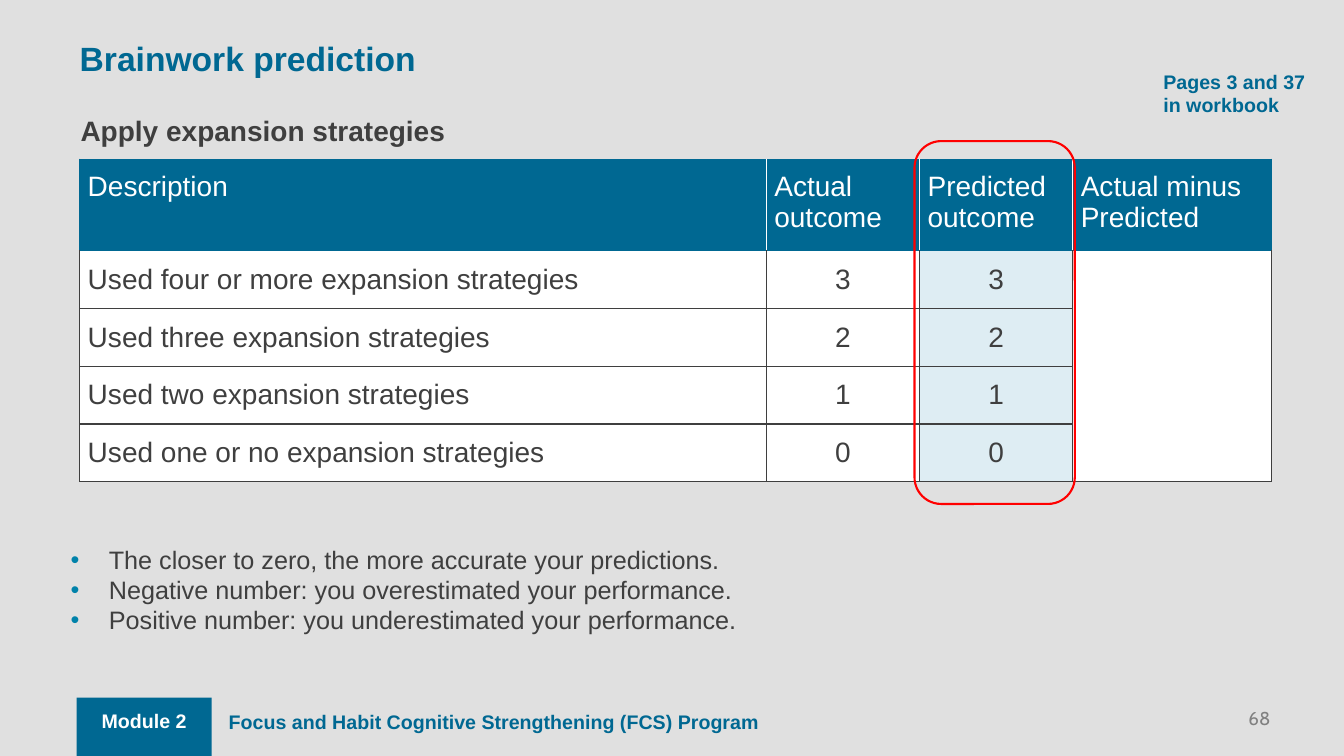
from lxml import etree
from pptx import Presentation
from pptx import util as u
from pptx.dml.color import RGBColor
from pptx.enum import shapes, text
from pptx.oxml import ns

COLORS = {
    "backdrop": "E0E0E0", "brand": "006892", "ink": "3F3F3F", "white": "FFFFFF",
    "highlight": "DEEDF3", "ring": "FF0000", "bullet": "0082AA", "muted": "808080",
}
ALIGN = {"left": text.PP_ALIGN.LEFT, "center": text.PP_ALIGN.CENTER, "right": text.PP_ALIGN.RIGHT}
ANCHOR = {"top": text.MSO_ANCHOR.TOP, "middle": text.MSO_ANCHOR.MIDDLE}
PADDING = (0.1, 0.05)
CELL_PADDING = (0.08, 0.12)
FLUSH = (0, 0)


def rgb(name):
    """Return the palette colour of this name."""
    return RGBColor.from_string(COLORS[name])


def add_bullet(paragraph, color, indent):
    """Give a paragraph a hanging bullet."""
    props = paragraph._p.get_or_add_pPr()
    props.set("marL", str(indent))
    props.set("indent", str(-indent))
    tint = etree.SubElement(props, ns.qn("a:buClr"))
    etree.SubElement(tint, ns.qn("a:srgbClr"), val=COLORS[color])
    etree.SubElement(props, ns.qn("a:buFont"), typeface="Arial")
    etree.SubElement(props, ns.qn("a:buChar"), char="•")


def write(frame, content, size=20, color="ink", bold=False, font="Arial",
          align="left", before=0, bullet=None):
    """Fill a text frame, one paragraph for each line of content."""
    for index, line in enumerate(content.split("\n")):
        paragraph = frame.add_paragraph() if index else frame.paragraphs[0]
        paragraph.alignment = ALIGN[align]
        paragraph.space_before = u.Pt(before)
        if bullet:
            add_bullet(paragraph, bullet, u.Inches(0.38))
        run = paragraph.add_run()
        run.text = line
        run.font.size, run.font.bold, run.font.name = u.Pt(size), bold, font
        run.font.color.rgb = rgb(color)


def set_borders(cell, left, right, top, bottom):
    """Draw the four borders of a table cell."""
    props = cell._tc.get_or_add_tcPr()
    for place, (side, color) in enumerate(zip("LRTB", (left, right, top, bottom))):
        border = etree.Element(ns.qn(f"a:ln{side}"), w=str(u.Pt(1)))
        fill = etree.SubElement(border, ns.qn("a:solidFill"))
        etree.SubElement(fill, ns.qn("a:srgbClr"), val=COLORS[color])
        props.insert(place, border)


class WorkbookSlide:
    """A slide on a grid whose columns and rows are a tenth of an inch."""

    unit = u.Inches(0.1)

    def __init__(self, deck):
        """Add a blank slide with a plain backdrop."""
        self.slide = deck.slides.add_slide(deck.slide_layouts[6])
        fill = self.slide.background.fill
        fill.solid()
        fill.fore_color.rgb = rgb("backdrop")

    def grid(self, *steps):
        """Turn grid steps into lengths."""
        return [round(step * self.unit) for step in steps]

    def label(self, area, content, padding=PADDING, anchor="top", **style):
        """Add a text box."""
        frame = self.slide.shapes.add_textbox(*self.grid(*area)).text_frame
        frame.word_wrap = True
        frame.vertical_anchor = ANCHOR[anchor]
        frame.margin_left = frame.margin_right = u.Inches(padding[0])
        frame.margin_top = frame.margin_bottom = u.Inches(padding[1])
        write(frame, content, **style)

    def block(self, kind, area, fill=None, line=None):
        """Add a preset shape, filled or outlined."""
        block = self.slide.shapes.add_shape(kind, *self.grid(*area))
        block.shadow.inherit = False
        if fill:
            block.fill.solid()
            block.fill.fore_color.rgb = rgb(fill)
        else:
            block.fill.background()
        if line:
            block.line.color.rgb = rgb(line)
            block.line.width = u.Pt(1.5)
        else:
            block.line.fill.background()

    def scores(self, corner, columns, rows, headings, records):
        """Add the score table with its last column merged below the heading."""
        area = (*corner, sum(columns), sum(rows))
        table = self.slide.shapes.add_table(len(rows), len(columns), *self.grid(*area)).table
        table.horz_banding = False
        for column, width in zip(table.columns, self.grid(*columns)):
            column.width = width
        for row, height in zip(table.rows, self.grid(*rows)):
            row.height = height
        last = len(columns) - 1
        for r, record in enumerate([headings, *records]):
            for c, content in enumerate(record):
                cell = table.cell(r, c)
                cell.margin_left = cell.margin_right = u.Inches(CELL_PADDING[0])
                cell.margin_top = cell.margin_bottom = u.Inches(CELL_PADDING[1])
                cell.vertical_anchor = ANCHOR["middle" if r else "top"]
                cell.fill.solid()
                body = "highlight" if c == 2 else "white"
                cell.fill.fore_color.rgb = rgb(body if r else "brand")
                if r:
                    set_borders(cell, "ink", "ink", "brand" if r == 1 else "ink", "ink")
                else:
                    set_borders(cell, "white" if c else "brand",
                                "white" if c < last else "brand", "brand", "brand")
                if content:
                    write(cell.text_frame, content, color="ink" if r else "white",
                          align="center" if r and c else "left")
        table.cell(1, last).merge(table.cell(len(records), last))


def main():
    """Build and save the slide."""
    deck = Presentation()
    deck.slide_width, deck.slide_height = u.Inches(13.33), u.Inches(7.5)
    page = WorkbookSlide(deck)
    heading = {"color": "brand", "bold": True}

    page.block(shapes.MSO_SHAPE.RECTANGLE, (7.6, 69.2, 13.4, 5.8), fill="brand")
    page.label((21.7, 69.9, 111.4, 4.7), "Focus and Habit Cognitive Strengthening (FCS) Program",
               size=14, before=8, **heading)
    page.label((7.6, 69.8, 13.4, 3.4), "Module 2", size=14, color="white", bold=True,
               align="center", before=8)

    strategies = ["four or more", "three", "two", "one or no"]
    records = [(f"Used {count} expansion strategies", str(score), str(score), "")
               for score, count in zip((3, 2, 1, 0), strategies)]
    page.scores((7.9, 15.8), (68.1, 15.2, 15.2, 19.7), (9, *[5.7] * len(records)),
                ("Description", "Actual outcome", "Predicted outcome", "Actual minus Predicted"),
                records)

    page.label((7.9, 3.4, 89.2, 4.7), "Brainwork prediction", padding=FLUSH, anchor="middle",
               size=24, before=8, **heading)
    page.label((106, 70.1, 20, 2), "68", padding=FLUSH, size=13.3, color="muted",
               font="Cabin", align="right")
    page.label((7, 10.8, 55.2, 4.4), "Apply expansion strategies", bold=True)
    page.block(shapes.MSO_SHAPE.ROUNDED_RECTANGLE, (90.7, 14, 15.9, 36), line="ring")
    page.label((114.4, 6.4, 16.3, 5.7), "Pages 3 and 37 in workbook", size=14, **heading)
    page.label((7, 54, 118.1, 9.7),
               "The closer to zero, the more accurate your predictions.\n"
               "Negative number: you overestimated your performance.\n"
               "Positive number: you underestimated your performance.",
               padding=FLUSH, size=18, bullet="bullet")
    deck.save("out.pptx")


if __name__ == "__main__":
    main()
